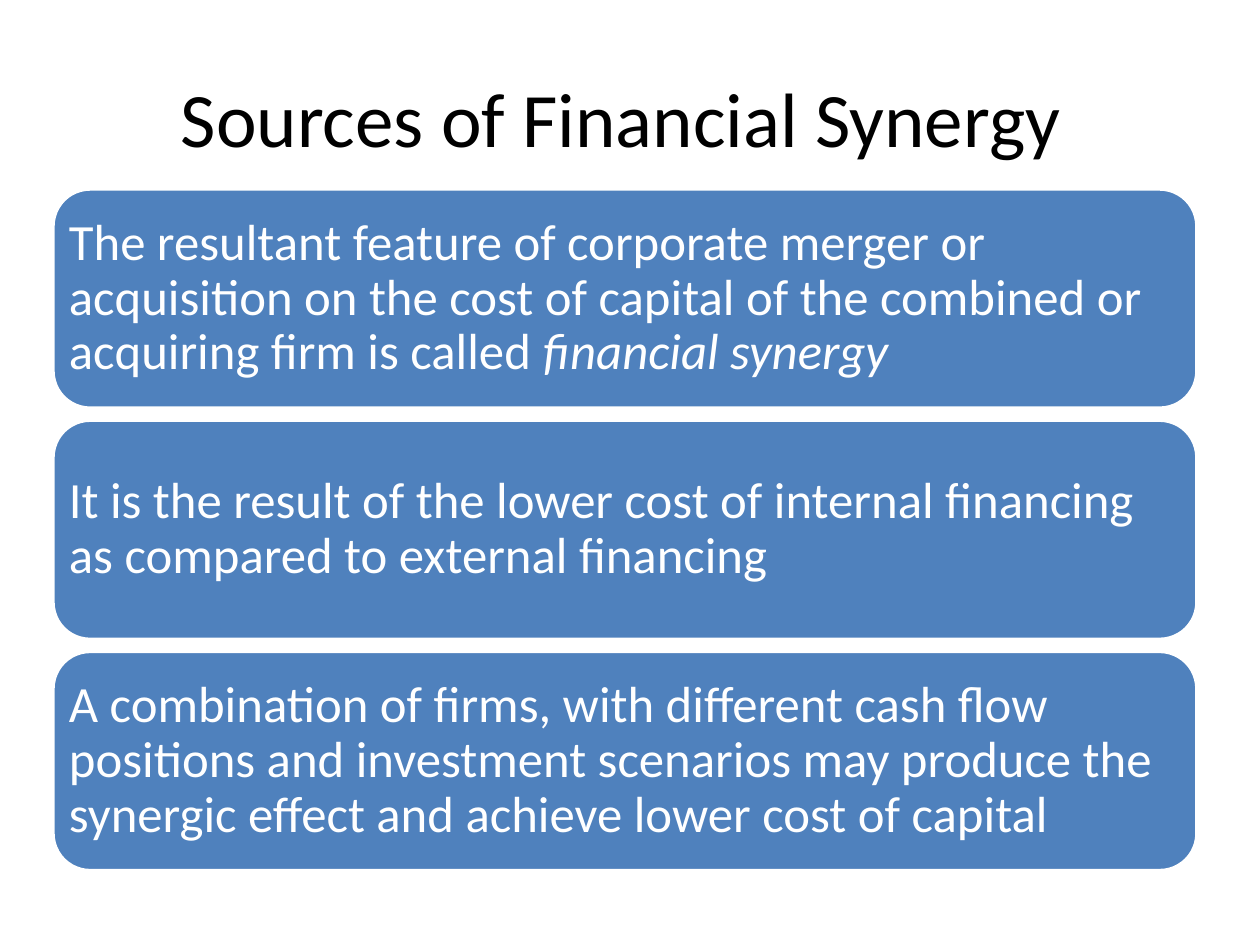
from dataclasses import dataclass

from pptx import Presentation
from pptx import util as u
from pptx.dml.color import RGBColor
from pptx.enum import shapes, text


@dataclass(frozen=True)
class Theme:
    font: str = "Calibri"
    title_color: str = "000000"
    card_fill: str = "4F81BD"
    card_text: str = "FFFFFF"
    card_line: str = "FFFFFF"
    title_size: int = 44
    card_size: int = 29


class SlideBuilder:
    def __init__(self, slide, theme):
        self.slide = slide
        self.theme = theme

    def set_text(self, shape, runs, size, color, align, inset,
                 line_spacing=1.0):
        """Fill a shape with one paragraph of (wording, italic) runs."""
        frame = shape.text_frame
        frame_format = {
            "word_wrap": True,
            "auto_size": text.MSO_AUTO_SIZE.NONE,
            "vertical_anchor": text.MSO_ANCHOR.MIDDLE,
            "margin_left": u.Inches(inset),
            "margin_right": u.Inches(inset),
            "margin_top": u.Inches(inset),
            "margin_bottom": u.Inches(inset),
        }
        for name, value in frame_format.items():
            setattr(frame, name, value)

        paragraph = frame.paragraphs[0]
        paragraph.alignment = align
        paragraph.line_spacing = line_spacing
        for wording, italic in runs:
            run = paragraph.add_run()
            run.text = wording
            font_format = {
                "name": self.theme.font,
                "size": u.Pt(size),
                "italic": italic,
            }
            for name, value in font_format.items():
                setattr(run.font, name, value)
            run.font.color.rgb = RGBColor.from_string(color)

    def title(self, wording, left, top, width, height):
        shape = self.slide.shapes.add_textbox(
            *map(u.Inches, (left, top, width, height)))
        self.set_text(shape, [(wording, None)], self.theme.title_size,
                      self.theme.title_color, text.PP_ALIGN.CENTER, inset=0.1)

    def card(self, runs, left, top, width, height):
        shape = self.slide.shapes.add_shape(
            shapes.MSO_SHAPE.ROUNDED_RECTANGLE,
            *map(u.Inches, (left, top, width, height)))
        shape.adjustments[0] = 0.17
        shape.shadow.inherit = False
        shape.fill.solid()
        shape.fill.fore_color.rgb = RGBColor.from_string(self.theme.card_fill)
        shape.line.color.rgb = RGBColor.from_string(self.theme.card_line)
        shape.line.width = u.Pt(2)
        self.set_text(shape, runs, self.theme.card_size, self.theme.card_text,
                      text.PP_ALIGN.LEFT, inset=0.04, line_spacing=0.9)

    def card_stack(self, cards, left, top, width, bottom, card_height):
        """Spread the cards evenly between top and bottom."""
        pitch = (bottom - top - card_height) / (len(cards) - 1)
        for index, runs in enumerate(cards):
            self.card(runs, left, top + index * pitch, width, card_height)


CARDS = [
    [("The resultant feature of corporate merger or acquisition on the cost "
      "of capital of the combined or acquiring firm is called ", None),
     ("financial synergy", True)],
    [("It is the result of the lower cost of internal financing as compared "
      "to external financing", None)],
    [("A combination of firms, with different cash flow positions and "
      "investment scenarios may produce the synergic effect and achieve "
      "lower cost of capital", None)],
]


def main():
    presentation = Presentation()
    presentation.slide_width = u.Inches(10)
    presentation.slide_height = u.Inches(7.5)
    slide = presentation.slides.add_slide(presentation.slide_layouts[6])

    builder = SlideBuilder(slide, Theme())
    builder.title("Sources of Financial Synergy ", 0.5, 0.3, 9, 1.25)
    builder.card_stack(CARDS, left=0.42, top=1.5, width=9.08, bottom=6.91,
                       card_height=1.74)

    presentation.save("out.pptx")


if __name__ == "__main__":
    main()
